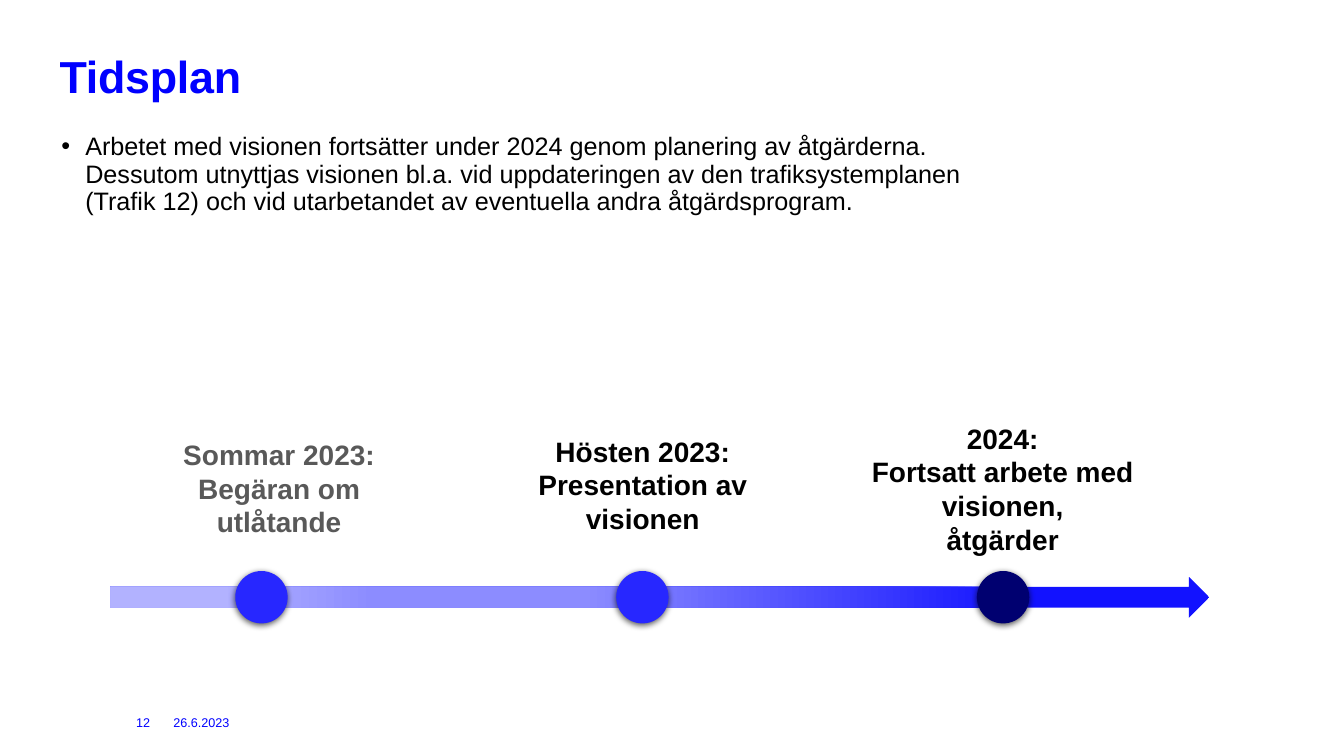
from lxml import etree
from pptx import Presentation
from pptx.dml.color import RGBColor
from pptx.enum import shapes, text
from pptx.oxml import parse_xml
from pptx.oxml.ns import nsdecls, qn
from pptx.util import Cm, Pt

BLUE = RGBColor(0x00, 0x00, 0xFF)
BLACK = RGBColor(0x00, 0x00, 0x00)
GREY = RGBColor(0x59, 0x59, 0x59)
DOT = RGBColor(0x27, 0x27, 0xFF)
NAVY = RGBColor(0x00, 0x00, 0x70)
FADE = [(17, RGBColor(0x12, 0x12, 0xFF)), (57, RGBColor(0x8C, 0x8C, 0xFF)),
        (76, RGBColor(0x8C, 0x8C, 0xFF)), (90, RGBColor(0xB2, 0xB2, 0xFF))]

# Dot centre from the arrow's left end, label left, top, width, height (cm
# from the arrow's corner), dot colour, text colour, paragraphs
STEPS = [
    (3.81, 0.51, -3.63, 7.49, 2.82, DOT, GREY,
     ["Sommar 2023:\vBegäran om utlåtande"]),
    (13.41, 9.75, -3.71, 7.34, 2.82, DOT, BLACK,
     ["Hösten 2023:", "Presentation av visionen"]),
    (22.5, 18.82, -4.04, 7.34, 3.68, NAVY, BLACK,
     ["2024:", "Fortsatt arbete med visionen,", "åtgärder"]),
]


def style(frame, size, color, bold=False, align=None):
    for para in frame.paragraphs:
        para.alignment = align
        for run in para.runs:
            font = run.font
            font.name, font.size, font.bold = "Arial", Pt(size), bold
            font.color.rgb = color


def trim(frame):
    frame.margin_left = frame.margin_right = 0
    frame.margin_top = frame.margin_bottom = 0


def add_text(slide, box, words):
    frame = slide.shapes.add_textbox(*map(Cm, box)).text_frame
    frame.word_wrap = True
    frame.text = words
    return frame


def add_title(slide, box):
    title = slide.shapes.title
    title.left, title.top, title.width, title.height = map(Cm, box)
    frame = title.text_frame
    trim(frame)
    frame.auto_size = text.MSO_AUTO_SIZE.NONE
    frame.vertical_anchor = text.MSO_ANCHOR.BOTTOM
    frame.text = "Tidsplan"
    frame.paragraphs[0].line_spacing = 0.85
    style(frame, 32, BLUE, True, text.PP_ALIGN.LEFT)
    frame.paragraphs[0].runs[0].font._element.set("spc", "-20")


def add_body(slide, box):
    frame = add_text(slide, box, (
        "Arbetet med visionen fortsätter under 2024 genom planering av "
        "åtgärderna. Dessutom utnyttjas visionen bl.a. vid uppdateringen av "
        "den trafiksystemplanen (Trafik 12) och vid utarbetandet av "
        "eventuella andra åtgärdsprogram."))
    trim(frame)
    para = frame.paragraphs[0]
    para.line_spacing = 0.9
    props = para._p.get_or_add_pPr()
    props.set("marL", str(Cm(0.6)))
    props.set("indent", str(-Cm(0.6)))
    etree.SubElement(props, qn("a:buFont")).set("typeface", "Arial")
    etree.SubElement(props, qn("a:buChar")).set("char", "•")
    style(frame, 18, BLACK)


def add_arrow(slide, box):
    arrow = slide.shapes.add_shape(
        shapes.MSO_SHAPE.RIGHT_ARROW, *map(Cm, box))
    arrow.shadow.inherit = False
    arrow.line.fill.background()
    stops = "".join(
        f'<a:gs pos="{pos * 1000}"><a:srgbClr val="{color}"/></a:gs>'
        for pos, color in FADE)
    fill = parse_xml(
        f'<a:gradFill {nsdecls("a")} rotWithShape="1"><a:gsLst>{stops}'
        '</a:gsLst><a:lin ang="10800000" scaled="0"/></a:gradFill>')
    arrow._element.spPr.find(qn("a:prstGeom")).addnext(fill)


def add_dot(slide, mid_x, mid_y, color, size=1.32):
    dot = slide.shapes.add_shape(
        shapes.MSO_SHAPE.OVAL, Cm(mid_x - size / 2), Cm(mid_y - size / 2),
        Cm(size), Cm(size))
    dot.fill.solid()
    dot.fill.fore_color.rgb = color
    dot.line.fill.background()
    # Soft shadow straight below
    dot.shadow.inherit = False
    effects = dot._element.spPr.find(qn("a:effectLst"))
    effects.append(parse_xml(
        f'<a:outerShdw {nsdecls("a")} blurRad="{Pt(4.5)}" dist="{Pt(1.5)}" '
        'dir="5400000" rotWithShape="0"><a:srgbClr val="000000">'
        '<a:alpha val="63000"/></a:srgbClr></a:outerShdw>'))


def add_line(slide, box):
    left, top, _, height = box
    add_arrow(slide, box)
    for mid, dx, dy, wide, high, fill, ink, lines in STEPS:
        add_dot(slide, left + mid, top + height / 2, fill)
        frame = add_text(slide, (left + dx, top + dy, wide, high),
                         "\n".join(lines))
        style(frame, 20, ink, True, text.PP_ALIGN.CENTER)


def add_foot(slide, box):
    left, top, width, height = box
    page = 0.94
    for words, x, wide in [("12", left, page),
                           ("26.6.2023", left + page, width - page)]:
        frame = add_text(slide, (x, top, wide, height), words)
        trim(frame)
        frame.vertical_anchor = text.MSO_ANCHOR.MIDDLE
        style(frame, 9, BLUE)


def main():
    deck = Presentation()
    deck.slide_width, deck.slide_height = Cm(33.87), Cm(19.05)
    slide = deck.slides.add_slide(deck.slide_layouts[5])
    add_title(slide, (1.5, 0.99, 27.97, 1.6))
    add_body(slide, (1.55, 3.38, 24.61, 5.28))
    add_line(slide, (2.78, 14.53, 27.7, 1.04))
    add_foot(slide, (3.43, 17.96, 2.97, 0.51))
    deck.save("out.pptx")


if __name__ == "__main__":
    main()
